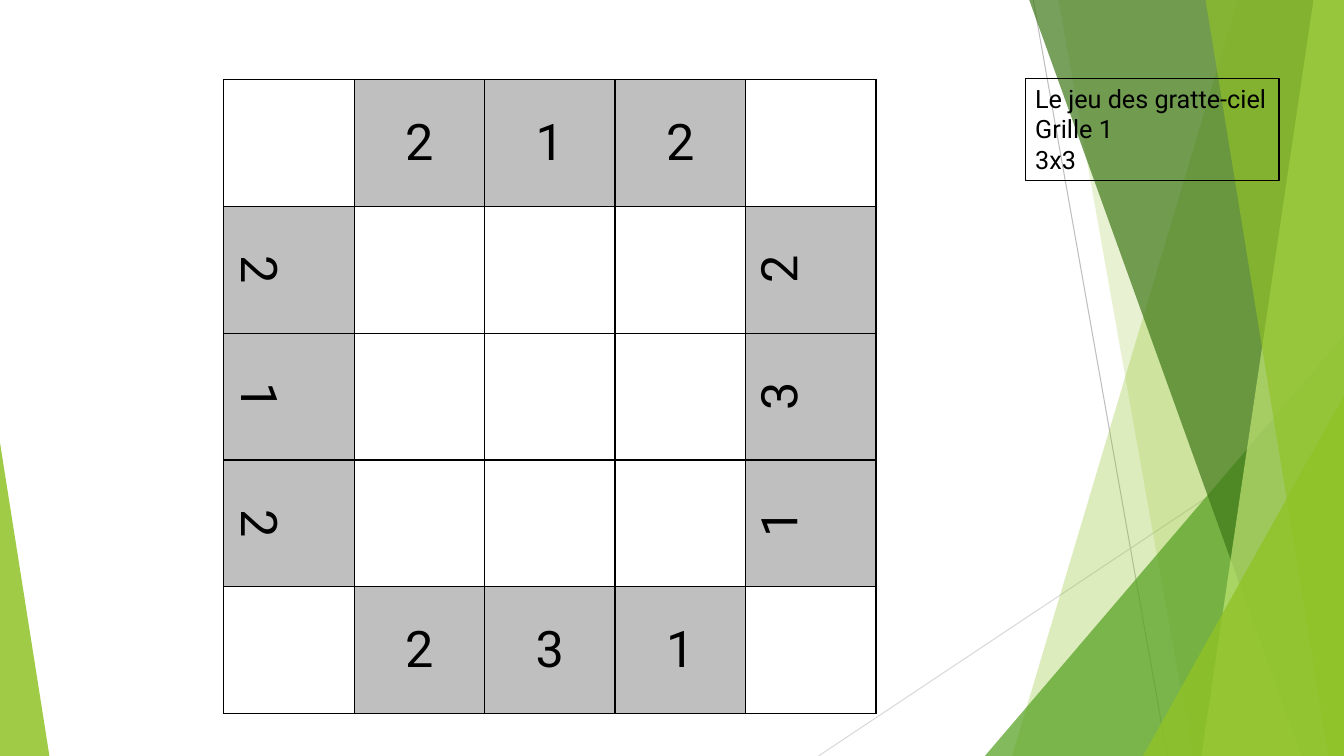
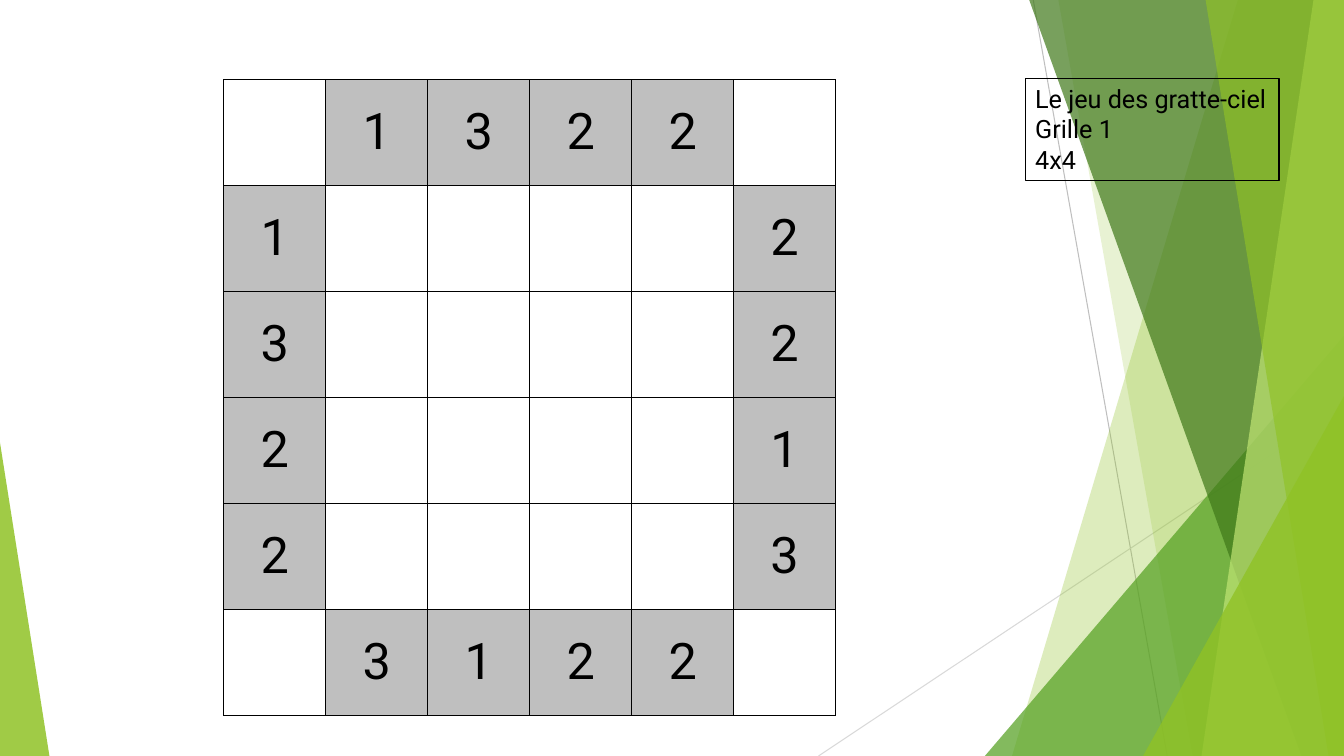
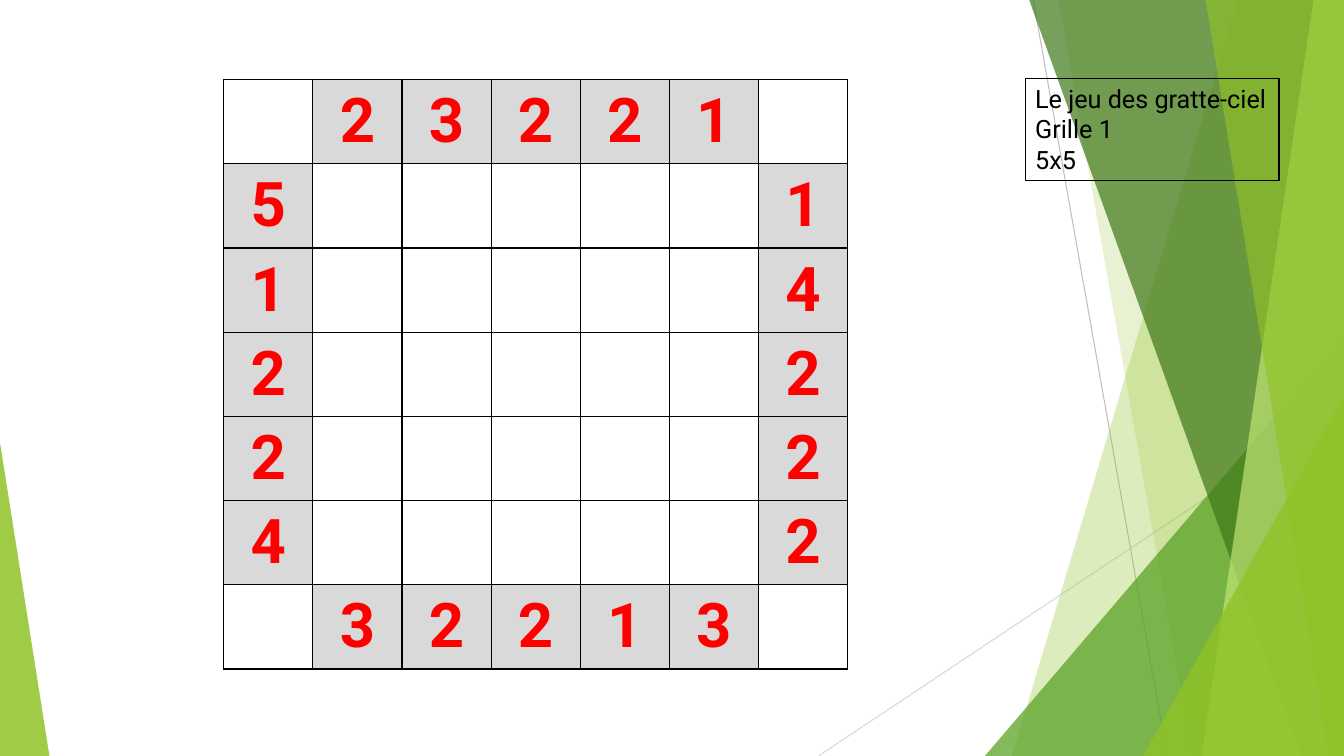
"""Build three skyscraper puzzle grids on a shared green faceted background."""
import dataclasses
import typing

import lxml.etree
import pptx
import pptx.dml.color
import pptx.enum.shapes
import pptx.enum.text
import pptx.oxml.ns
import pptx.util

SLIDE_WIDTH = pptx.util.Inches(13.33)
SLIDE_HEIGHT = pptx.util.Inches(7.5)
FONT = "Roboto"
BLACK, RED = "000000", "FF0000"
GREEN, MID_GREEN, DARK_GREEN, PALE_GREEN = "90C226", "54A021", "3F7819", "C0E474"
GRID_LEFT, GRID_TOP = 16.65, 10.53
LABEL_BOX = (76.28, 10.4, 18.9, 13.47)


@dataclasses.dataclass(frozen=True)
class Ray:
    start: tuple[float, float]
    end: tuple[float, float]
    color: str


@dataclasses.dataclass(frozen=True)
class Band:
    top_x: float
    bottom_x: float
    color: str
    opacity: int


@dataclasses.dataclass(frozen=True)
class Corner:
    left: float
    top: float
    width: float
    apex: int
    color: str
    opacity: int


@dataclasses.dataclass(frozen=True)
class Puzzle:
    top: str
    left: str
    right: str
    bottom: str
    width: float
    height: float
    clue_fill: str = "BFBFBF"
    clue_color: str = BLACK
    clue_size: int = 36
    bold: bool = False
    turned: bool = False


DECOR = [
    Ray((76.88, 0), (86.85, 100), "BFBFBF"),
    Ray((100, 53.73), (60.9, 100), "D9D9D9"),
    Band(92.1, 75.3, GREEN, 30),
    Band(78.75, 88.73, GREEN, 20),
    Corner(73.28, 44.4, 26.72, 1, MID_GREEN, 72),
    Band(76.58, 96.83, DARK_GREEN, 70),
    Band(97.73, 89.4, PALE_GREEN, 70),
    Band(89.7, 98.85, GREEN, 65),
    Corner(85.05, 52.4, 14.95, 1, GREEN, 80),
    Corner(0, 58.53, 3.68, 0, GREEN, 85),
]

PUZZLES = [
    Puzzle("212", "212", "231", "231", 48.53, 83.87, turned=True),
    Puzzle("1322", "1322", "2213", "3122", 45.53, 84.13),
    Puzzle("23221", "51224", "14222", "32213", 46.43, 78, "D9D9D9", RED, 44, True),
]


def rgb(color: str) -> pptx.dml.color.RGBColor:
    """Turn a hex string into a colour."""
    return pptx.dml.color.RGBColor.from_string(color)


def across(percent: float) -> int:
    """Give a share of the slide's width."""
    return round(SLIDE_WIDTH * percent / 100)


def down(percent: float) -> int:
    """Give a share of the slide's height."""
    return round(SLIDE_HEIGHT * percent / 100)


def apply_format(target: typing.Any, values: dict[str, typing.Any]) -> None:
    """Set each named attribute on the target."""
    for name, value in values.items():
        setattr(target, name, value)


def write_text(paragraph: typing.Any, text: str, size: int, color: str = BLACK, bold: bool = False) -> None:
    """Add one formatted run to a paragraph."""
    run = paragraph.add_run()
    run.text = text
    apply_format(run.font, {"name": FONT, "size": pptx.util.Pt(size), "bold": bold})
    run.font.color.rgb = rgb(color)


def paint(shape: typing.Any, color: str, opacity: int) -> None:
    """Give a shape a translucent fill without line or shadow."""
    shape.shadow.inherit = False
    shape.line.fill.background()
    shape.fill.solid()
    shape.fill.fore_color.rgb = rgb(color)
    color_element = shape.element.spPr.find(".//" + pptx.oxml.ns.qn("a:srgbClr"))
    lxml.etree.SubElement(color_element, pptx.oxml.ns.qn("a:alpha"), val=str(opacity * 1000))


def draw_ray(shapes: typing.Any, ray: Ray) -> typing.Any:
    """Draw a thin line."""
    connector = shapes.add_connector(
        pptx.enum.shapes.MSO_CONNECTOR.STRAIGHT,
        across(ray.start[0]), down(ray.start[1]), across(ray.end[0]), down(ray.end[1]),
    )
    connector.line.width = pptx.util.Pt(0.75)
    connector.line.color.rgb = rgb(ray.color)
    lxml.etree.SubElement(connector.element.spPr, pptx.oxml.ns.qn("a:effectLst"))
    return connector


def draw_band(shapes: typing.Any, band: Band) -> typing.Any:
    """Draw a slanted band that reaches the right edge."""
    builder = shapes.build_freeform(across(band.top_x), 0)
    builder.add_line_segments(
        [(SLIDE_WIDTH, 0), (SLIDE_WIDTH, SLIDE_HEIGHT), (across(band.bottom_x), SLIDE_HEIGHT)]
    )
    shape = builder.convert_to_shape()
    paint(shape, band.color, band.opacity)
    return shape


def draw_corner(shapes: typing.Any, corner: Corner) -> typing.Any:
    """Draw a right triangle that stands on the bottom edge."""
    shape = shapes.add_shape(
        pptx.enum.shapes.MSO_SHAPE.ISOSCELES_TRIANGLE,
        across(corner.left), down(corner.top), across(corner.width), down(100 - corner.top),
    )
    shape.adjustments[0] = corner.apex
    paint(shape, corner.color, corner.opacity)
    return shape


def move_decor_to_layout(slide: typing.Any) -> None:
    """Draw the background once and place it on the slide's layout."""
    layout_tree = slide.slide_layout.shapes.element
    for placeholder in list(slide.slide_layout.placeholders):
        layout_tree.remove(placeholder.element)
    drawers = {Ray: draw_ray, Band: draw_band, Corner: draw_corner}
    drawn = [drawers[type(item)](slide.shapes, item) for item in DECOR]
    for shape in drawn:
        layout_tree.append(shape.element)


def draw_label(slide: typing.Any, lines: list[str]) -> None:
    """Draw the framed label that names the puzzle."""
    left, top, width, height = LABEL_BOX
    label = slide.shapes.add_textbox(across(left), down(top), across(width), down(height))
    label.line.width = pptx.util.Pt(1)
    label.line.color.rgb = rgb(BLACK)
    frame = label.text_frame
    apply_format(frame, {"word_wrap": True, "auto_size": pptx.enum.text.MSO_AUTO_SIZE.SHAPE_TO_FIT_TEXT})
    for index, line in enumerate(lines):
        paragraph = frame.add_paragraph() if index else frame.paragraphs[0]
        write_text(paragraph, line, 18)


def add_borders(cell: typing.Any) -> None:
    """Give a cell four thin black borders."""
    properties = cell._tc.get_or_add_tcPr()
    for index, side in enumerate(("a:lnL", "a:lnR", "a:lnT", "a:lnB")):
        border = lxml.etree.SubElement(properties, pptx.oxml.ns.qn(side), w=str(pptx.util.Pt(1)))
        fill = lxml.etree.SubElement(border, pptx.oxml.ns.qn("a:solidFill"))
        lxml.etree.SubElement(fill, pptx.oxml.ns.qn("a:srgbClr"), val=BLACK)
        properties.insert(index, border)


def write_clue(cell: typing.Any, clue: str, puzzle: Puzzle) -> None:
    """Write one clue centred on a grey cell."""
    cell.fill.solid()
    cell.fill.fore_color.rgb = rgb(puzzle.clue_fill)
    cell.vertical_anchor = pptx.enum.text.MSO_ANCHOR.MIDDLE
    paragraph = cell.text_frame.paragraphs[0]
    paragraph.alignment = pptx.enum.text.PP_ALIGN.CENTER
    write_text(paragraph, clue, puzzle.clue_size, puzzle.clue_color, puzzle.bold)


def draw_grid(slide: typing.Any, puzzle: Puzzle) -> None:
    """Draw the puzzle as a square table with clues around its edge."""
    count = len(puzzle.top) + 2
    last = count - 1
    width, height = across(puzzle.width), down(puzzle.height)
    table = slide.shapes.add_table(count, count, across(GRID_LEFT), down(GRID_TOP), width, height).table
    apply_format(table, {"first_row": False, "horz_banding": False})
    for column in table.columns:
        column.width = width // count
    for row in table.rows:
        row.height = height // count
    for cell in table.iter_cells():
        cell.fill.background()
    for index in range(1, last):
        edge_clues = [
            (0, index, puzzle.top, None),
            (last, index, puzzle.bottom, None),
            (index, 0, puzzle.left, "vert"),
            (index, last, puzzle.right, "vert270"),
        ]
        for row_index, column_index, clues, direction in edge_clues:
            cell = table.cell(row_index, column_index)
            write_clue(cell, clues[index - 1], puzzle)
            if puzzle.turned and direction:
                cell._tc.get_or_add_tcPr().set("vert", direction)
    for cell in table.iter_cells():
        add_borders(cell)


def main() -> None:
    """Build and save the presentation."""
    presentation = pptx.Presentation()
    apply_format(presentation, {"slide_width": SLIDE_WIDTH, "slide_height": SLIDE_HEIGHT})
    blank_layout = presentation.slide_layouts[6]
    for index, puzzle in enumerate(PUZZLES):
        slide = presentation.slides.add_slide(blank_layout)
        if index == 0:
            move_decor_to_layout(slide)
        draw_grid(slide, puzzle)
        size = len(puzzle.top)
        draw_label(slide, ["Le jeu des gratte-ciel", "Grille 1", f"{size}x{size}"])
    presentation.save("out.pptx")


if __name__ == "__main__":
    main()
